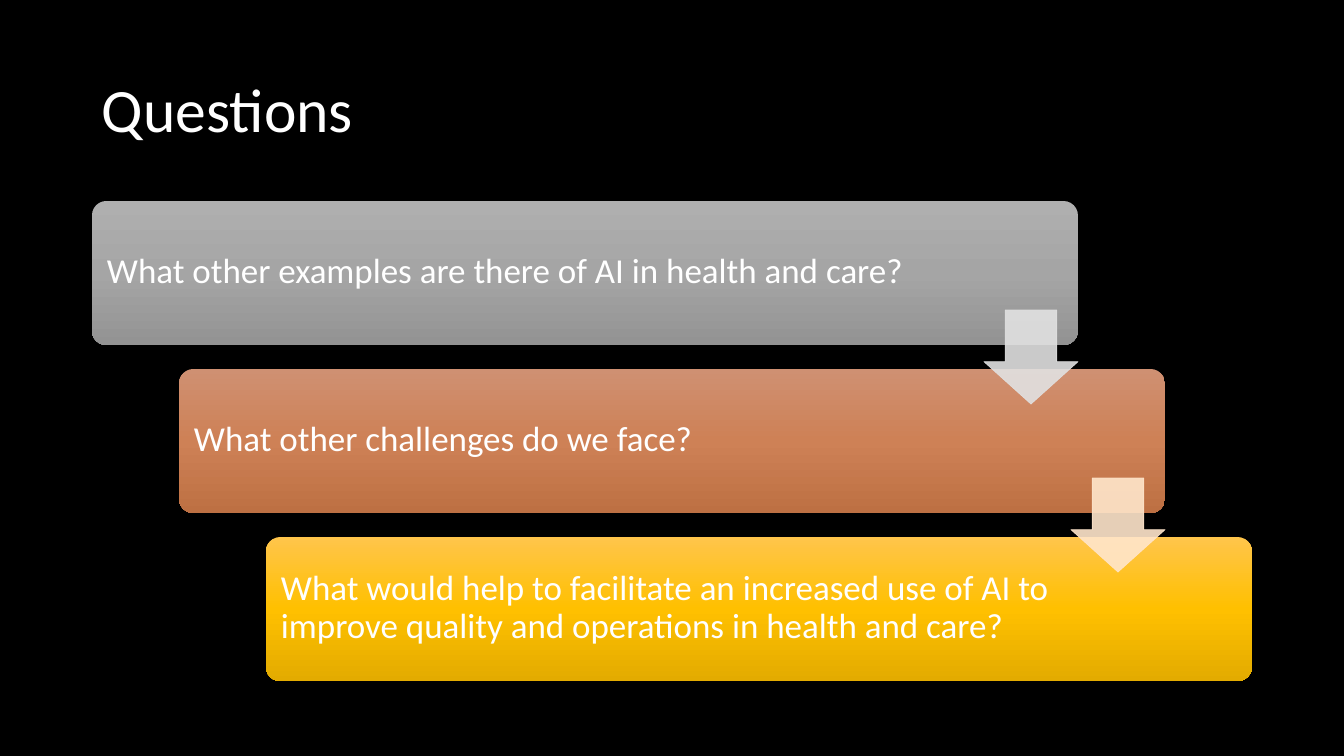
from copy import deepcopy

from lxml.etree import SubElement
from pptx import Presentation
from pptx.dml.color import RGBColor
from pptx.enum.shapes import MSO_SHAPE
from pptx.enum.text import MSO_ANCHOR
from pptx.oxml.ns import qn
from pptx.util import Pt

PX = 12192000 / 1344
FONT = "Calibri"
BLACK = RGBColor(0x00, 0x00, 0x00)
WHITE = RGBColor(0xFF, 0xFF, 0xFF)
GREYS = (RGBColor(0xAF, 0xAF, 0xAF), RGBColor(0xA5, 0xA5, 0xA5), RGBColor(0x93, 0x93, 0x93))
COPPERS = (RGBColor(0xCF, 0x90, 0x72), RGBColor(0xCE, 0x81, 0x56), RGBColor(0xBD, 0x70, 0x43))
GOLDS = (RGBColor(0xFF, 0xC5, 0x4B), RGBColor(0xFF, 0xC0, 0x00), RGBColor(0xE3, 0xAB, 0x00))
PALE_GREY = RGBColor(0xE1, 0xE1, 0xE1)
PALE_GOLD = RGBColor(0xFF, 0xE6, 0xCB)

STEP_X, STEP_Y = 87, 168
QUESTIONS = (
    ("What other examples are there of AI in health and care?", 830, GREYS),
    ("What other challenges do we face?", 796, COPPERS),
    ("What would help to facilitate an increased use of AI to improve quality "
     "and operations in health and care?", 796, GOLDS),
)


def px(*lengths):
    """Turn pixel lengths into EMU."""
    return [round(length * PX) for length in lengths]


def add_text(slide, wording, box, size, inset_y):
    """Add a wrapped, vertically centred line of white text."""
    label = slide.shapes.add_textbox(*px(*box))
    frame = label.text_frame
    frame.word_wrap = True
    frame.vertical_anchor = MSO_ANCHOR.MIDDLE
    frame.margin_left, frame.margin_right = px(10, 10)
    frame.margin_top, frame.margin_bottom = px(inset_y, inset_y)
    paragraph = frame.paragraphs[0]
    paragraph.line_spacing = 0.9
    run = paragraph.add_run()
    run.text = wording
    run.font.name = FONT
    run.font.size = Pt(size)
    run.font.color.rgb = WHITE


def add_card(slide, left, top, colours):
    """Add a rounded card shaded from top to bottom."""
    card = slide.shapes.add_shape(MSO_SHAPE.ROUNDED_RECTANGLE, *px(left, top, 986, 144))
    card.adjustments[0] = 0.1
    card.shadow.inherit = False
    card.line.fill.background()
    card.fill.gradient()
    card.fill.gradient_angle = 270
    stop_list = next(card.element.iter(qn("a:gsLst")))
    stop_list.insert(1, deepcopy(stop_list[0]))
    for stop, position, colour in zip(card.fill.gradient_stops, (0, 0.5, 1), colours):
        stop.position = position
        stop.color.rgb = colour


def add_arrow(slide, left, top, colour):
    """Add a slightly transparent arrow pointing to the next card."""
    arrow = slide.shapes.add_shape(MSO_SHAPE.DOWN_ARROW, *px(left, top, 94, 94))
    arrow.adjustments[0] = 0.55
    arrow.adjustments[1] = 0.45
    arrow.shadow.inherit = False
    arrow.fill.solid()
    arrow.fill.fore_color.rgb = colour
    arrow.line.color.rgb = colour
    arrow.line.width = Pt(0.5)
    for tint in arrow.element.spPr.iter(qn("a:srgbClr")):
        SubElement(tint, qn("a:alpha"), val="90000")


def main():
    """Build the questions slide and save it."""
    deck = Presentation()
    deck.slide_width, deck.slide_height = px(1344, 756)
    slide = deck.slides.add_slide(deck.slide_layouts[6])
    slide.background.fill.solid()
    slide.background.fill.fore_color.rgb = BLACK

    add_text(slide, "Questions", (92, 40, 1159, 146), 44, 5)
    for index, (question, width, colours) in enumerate(QUESTIONS):
        left, top = 92 + index * STEP_X, 201 + index * STEP_Y
        add_card(slide, left, top, colours)
        add_text(slide, question, (left + 5, top + 4, width, 135), 25, 10)
    for index, colour in enumerate((PALE_GREY, PALE_GOLD)):
        add_arrow(slide, 984 + index * STEP_X, 310 + index * STEP_Y, colour)

    deck.save("out.pptx")


if __name__ == "__main__":
    main()
